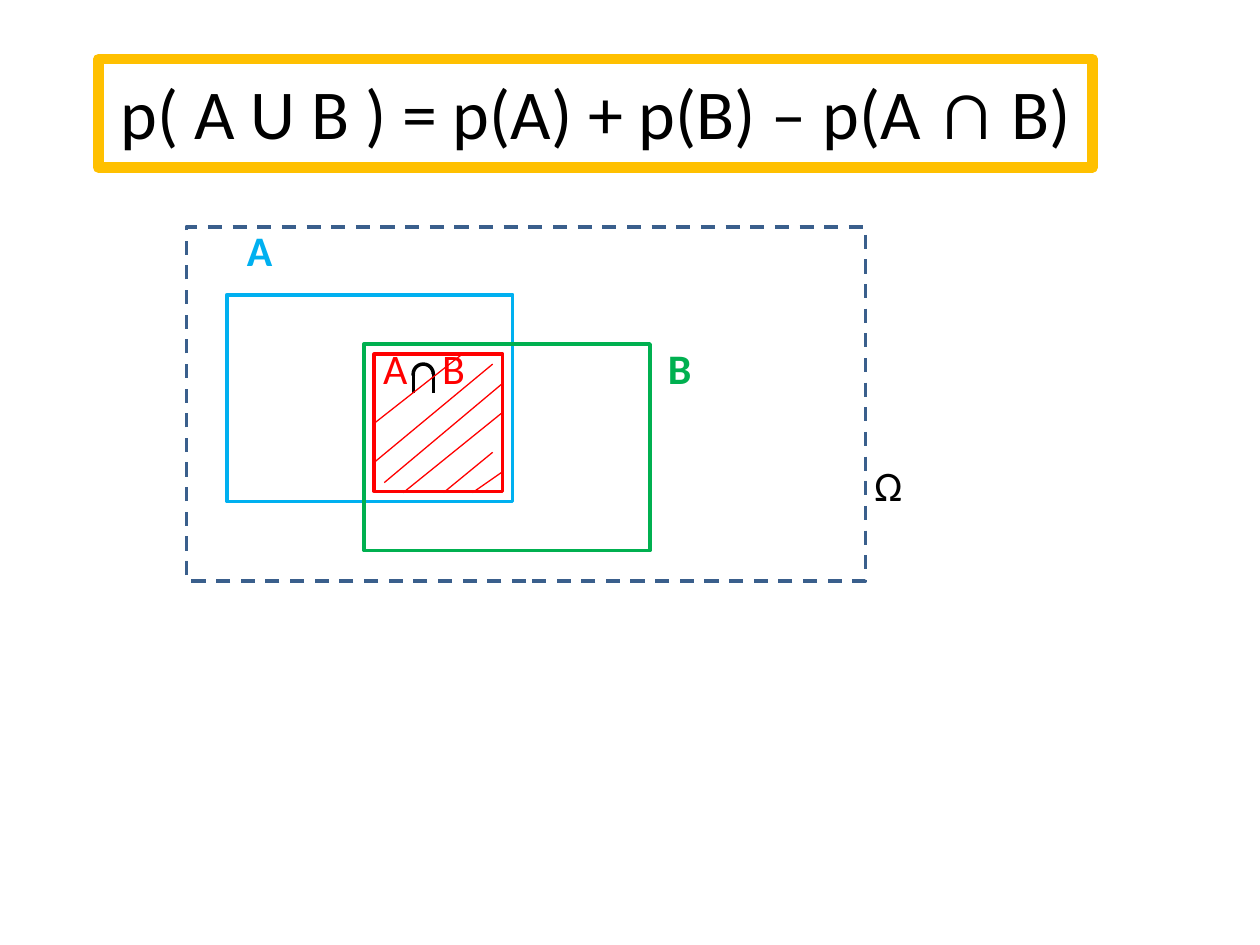
import pptx
import pptx.util
import pptx.dml.color
import pptx.enum.dml
import pptx.enum.shapes
import pptx.oxml.ns
import lxml.etree

Inches, Pt = pptx.util.Inches, pptx.util.Pt
SHAPE = pptx.enum.shapes.MSO_SHAPE

COLORS = {"black": "000000", "blue": "00B0F0", "green": "00B050", "red": "FF0000",
          "orange": "FFC000", "navy": "3A5F8C"}
FONT = "Calibri"

# Content: formula runs as (text, size)
FORMULA = [("p( A U B ) = p(A) + p(B) – p(A ", 40), ("∩", 48), (" B)", 40)]

# Labels: text, left, top, colour, bold
LABELS = [
    ("A", 1.96, 1.78, "blue", True),
    ("A", 3.04, 2.72, "red", False),
    ("B", 3.51, 2.72, "red", False),
    ("B", 5.3, 2.72, "green", True),
    ("Ω", 6.94, 3.65, "black", False),
]

# Frames: left, top, width, height, colour, line width, dashed
FRAMES = [
    (1.48, 1.8, 5.39, 2.81, "navy", 2, True),
    (1.8, 2.34, 2.27, 1.64, "blue", 2, False),
    (2.89, 2.73, 2.27, 1.64, "green", 2, False),
    (0.78, 0.47, 7.89, 0.86, "orange", 6, False),
    (2.97, 2.81, 1.02, 1.09, "red", 2, False),
]

# Intersection sign: left, top, arc size, foot of its legs
CAP_LEFT, CAP_TOP, CAP_SIZE, CAP_FOOT = 3.28, 2.89, 0.16, 3.12

# Hatching of the intersection: x1, y1, x2, y2
HATCHING = [
    (3.98, 3.28, 3.2, 3.91),
    (3.91, 3.59, 3.52, 3.91),
    (3.98, 3.75, 3.75, 3.91),
    (3.98, 3.05, 3.05, 3.83),
    (3.91, 2.89, 2.97, 3.67),
    (3.67, 2.81, 2.97, 3.36),
]


def rgb(name):
    return pptx.dml.color.RGBColor.from_string(COLORS[name])


def add_text(s, left, top, width, height, runs, color, bold=False):
    tf = s.shapes.add_textbox(Inches(left), Inches(top), Inches(width), Inches(height)).text_frame
    tf.margin_left = tf.margin_right = tf.margin_top = tf.margin_bottom = 0
    tf.word_wrap = True
    p = tf.paragraphs[0]
    for text, size in runs:
        r = p.add_run()
        r.text = text
        r.font.name, r.font.size, r.font.bold = FONT, Pt(size), bold
        r.font.color.rgb = rgb(color)


def add_outline(s, kind, left, top, width, height, color, weight, dashed=False):
    sp = s.shapes.add_shape(kind, Inches(left), Inches(top), Inches(width), Inches(height))
    sp.shadow.inherit = False
    sp.fill.background()
    sp.line.color.rgb = rgb(color)
    sp.line.width = Pt(weight)
    if dashed:
        sp.line.dash_style = pptx.enum.dml.MSO_LINE.DASH
    return sp


def add_line(s, x1, y1, x2, y2, color, weight):
    line = s.shapes.add_connector(pptx.enum.shapes.MSO_CONNECTOR.STRAIGHT,
                                  Inches(x1), Inches(y1), Inches(x2), Inches(y2))
    line.line.color.rgb = rgb(color)
    line.line.width = Pt(weight)
    lxml.etree.SubElement(line._element.spPr, pptx.oxml.ns.qn("a:effectLst"))


def main():
    prs = pptx.Presentation()
    prs.slide_width, prs.slide_height = Inches(10), Inches(7.5)
    s = prs.slides.add_slide(prs.slide_layouts[6])

    # Formula and labels
    add_text(s, 0.96, 0.44, 8.32, 0.85, FORMULA, "black")
    for text, left, top, color, bold in LABELS:
        add_text(s, left, top, 0.4, 0.41, [(text, 24)], color, bold)

    # Sample space, events and formula frame
    for frame in FRAMES:
        add_outline(s, SHAPE.RECTANGLE, *frame)

    # Intersection sign: an arc on two legs
    arc = add_outline(s, SHAPE.ARC, CAP_LEFT, CAP_TOP, CAP_SIZE, CAP_SIZE, "black", 2)
    arc.adjustments[0], arc.adjustments[1] = 103.43, 0
    for x in (CAP_LEFT, CAP_LEFT + CAP_SIZE):
        add_line(s, x, CAP_FOOT, x, CAP_TOP + CAP_SIZE / 2, "black", 2)

    # Hatching
    for ends in HATCHING:
        add_line(s, *ends, "red", 0.75)

    prs.save("out.pptx")


if __name__ == "__main__":
    main()
